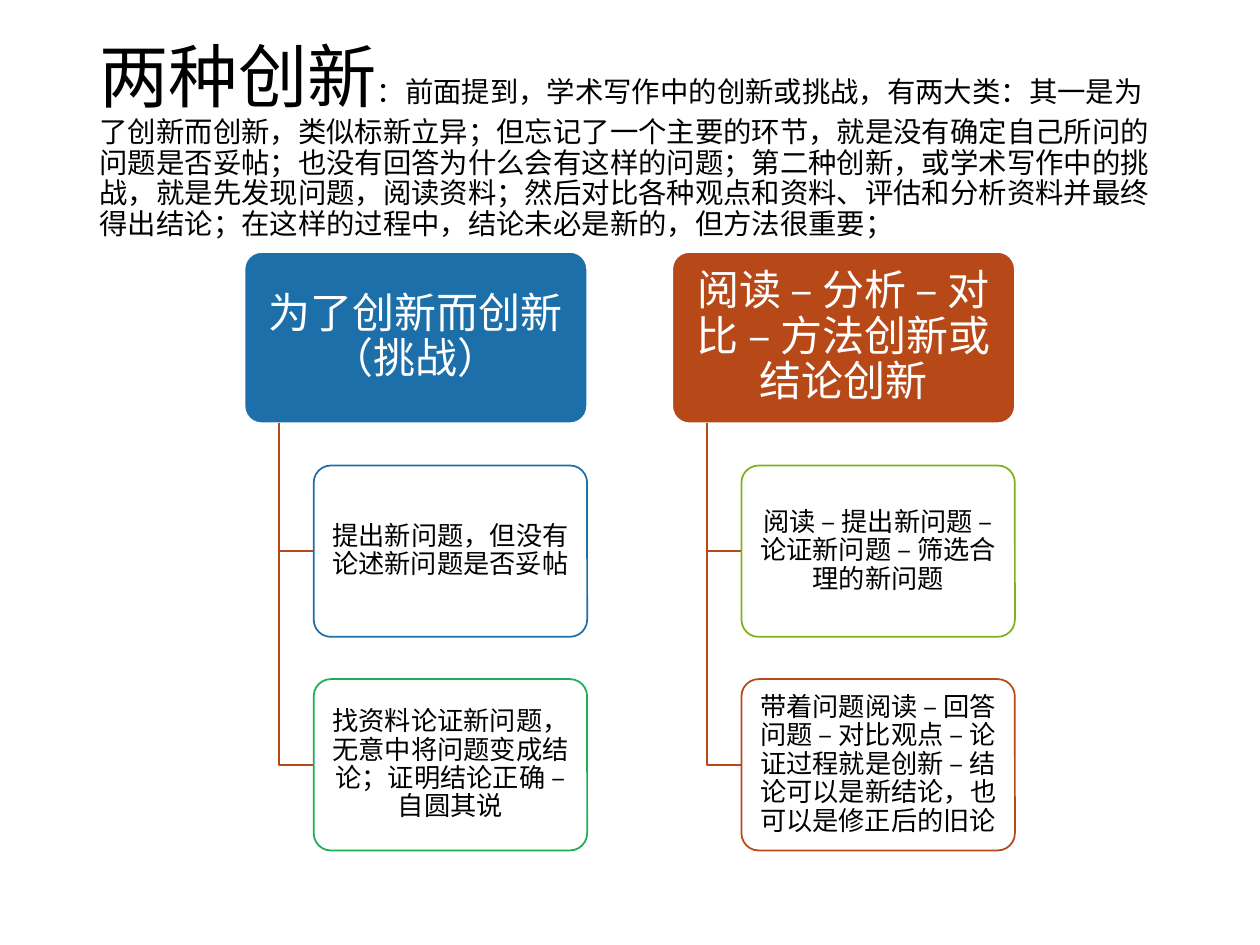
"""Build a slide that contrasts two kinds of innovation as a two-column hierarchy."""
from dataclasses import dataclass

from pptx import Presentation
from pptx.dml.color import RGBColor
from pptx.enum.shapes import MSO_SHAPE
from pptx.enum.text import MSO_ANCHOR, MSO_AUTO_SIZE, PP_ALIGN
from pptx.slide import Slide
from pptx.util import Inches, Pt

ROUNDED = MSO_SHAPE.ROUNDED_RECTANGLE
MIDDLE = MSO_ANCHOR.MIDDLE
NO_AUTOFIT = MSO_AUTO_SIZE.NONE
LEFT, CENTER = PP_ALIGN.LEFT, PP_ALIGN.CENTER

BLACK = RGBColor(0x00, 0x00, 0x00)
WHITE = RGBColor(0xFF, 0xFF, 0xFF)
BLUE = RGBColor(0x1D, 0x6F, 0xA9)
GREEN = RGBColor(0x1C, 0xAE, 0x53)
LIME = RGBColor(0x7F, 0xB2, 0x1A)
RUST = RGBColor(0xB7, 0x49, 0x19)

FONT = "Times New Roman"
COLUMN_LEFT, COLUMN_STEP = 1.94, 3.395
TOP, ROW_STEP, BOX_HEIGHT = 2.0, 1.695, 1.36
HEADER_WIDTH, CHILD_WIDTH = 2.72, 2.17
TRUNK_OFFSET, CHILD_OFFSET = 0.275, 0.55


@dataclass
class Card:
    text: str
    fill: RGBColor
    line: RGBColor
    color: RGBColor
    size: float
    width: float
    margins: tuple[float, float]


def header(text: str, fill: RGBColor) -> Card:
    return Card(text, fill, WHITE, WHITE, 24, HEADER_WIDTH, (0.05, 0.03))


def child(text: str, line: RGBColor) -> Card:
    return Card(text, WHITE, line, BLACK, 15, CHILD_WIDTH, (0.03, 0.02))


@dataclass
class Branch:
    head: Card
    children: list[Card]


TITLE_SPANS = [
    ("两种创新", 39.6),
    ("：前面提到，学术写作中的创新或挑战，有两大类：其一是为了创新而创新，类似标新立异；"
     "但忘记了一个主要的环节，就是没有确定自己所问的问题是否妥帖；也没有回答为什么会有这样的问题；"
     "第二种创新，或学术写作中的挑战，就是先发现问题，阅读资料；然后对比各种观点和资料、"
     "评估和分析资料并最终得出结论；在这样的过程中，结论未必是新的，但方法很重要；", 16.2),
]
BRANCHES = [
    Branch(header("为了创新而创新（挑战）", BLUE), [
        child("提出新问题，但没有论述新问题是否妥帖", BLUE),
        child("找资料论证新问题，无意中将问题变成结论；证明结论正确 – 自圆其说", GREEN),
    ]),
    Branch(header("阅读 – 分析 – 对比 – 方法创新或结论创新", RUST), [
        child("阅读 – 提出新问题 – 论证新问题 – 筛选合理的新问题", LIME),
        child("带着问题阅读 – 回答问题 – 对比观点 – 论证过程就是创新 – "
              "结论可以是新结论，也可以是修正后的旧论", RUST),
    ]),
]


def format_span(span, size: float, color: RGBColor) -> None:
    span.font.name = FONT
    span.font.size = Pt(size)
    span.font.color.rgb = color


def write_title(page: Slide) -> None:
    title = page.shapes.title
    title.left, title.top = Inches(0.69), Inches(0.4)
    title.width, title.height = Inches(8.62), Inches(1.45)
    frame = title.text_frame
    frame.auto_size = NO_AUTOFIT
    frame.vertical_anchor = MIDDLE
    para = frame.paragraphs[0]
    para.alignment = LEFT
    para.line_spacing = 0.9
    for text, size in TITLE_SPANS:
        span = para.add_run()
        span.text = text
        format_span(span, size, BLACK)


def draw_card(page: Slide, card: Card, left: float, top: float) -> None:
    box = page.shapes.add_shape(
        ROUNDED, Inches(left), Inches(top), Inches(card.width), Inches(BOX_HEIGHT))
    box.adjustments[0] = 0.1
    box.shadow.inherit = False
    box.fill.solid()
    box.fill.fore_color.rgb = card.fill
    box.line.color.rgb = card.line
    box.line.width = Pt(1)
    frame = box.text_frame
    frame.word_wrap = True
    frame.vertical_anchor = MIDDLE
    side, end = card.margins
    frame.margin_left = frame.margin_right = Inches(side)
    frame.margin_top = frame.margin_bottom = Inches(end)
    frame.text = card.text
    para = frame.paragraphs[0]
    para.alignment = CENTER
    para.line_spacing = 0.9
    format_span(para.runs[0], card.size, card.color)


def draw_elbow(page: Slide, left: float, top: float, right: float, bottom: float) -> None:
    builder = page.shapes.build_freeform(Inches(left), Inches(top))
    builder.add_line_segments(
        [(Inches(left), Inches(bottom)), (Inches(right), Inches(bottom))], close=False)
    elbow = builder.convert_to_shape()
    elbow.shadow.inherit = False
    elbow.fill.background()
    elbow.line.color.rgb = RUST
    elbow.line.width = Pt(1)


def draw_branch(page: Slide, branch: Branch, left: float) -> None:
    draw_card(page, branch.head, left, TOP)
    child_left = left + CHILD_OFFSET
    for row, card in enumerate(branch.children, start=1):
        top = TOP + row * ROW_STEP
        draw_elbow(page, left + TRUNK_OFFSET, TOP + BOX_HEIGHT,
                   child_left, top + BOX_HEIGHT / 2)
        draw_card(page, card, child_left, top)


def main() -> None:
    deck = Presentation()
    deck.slide_width, deck.slide_height = Inches(10), Inches(7.5)
    page = deck.slides.add_slide(deck.slide_layouts.get_by_name("Title Only"))
    write_title(page)
    for column, branch in enumerate(BRANCHES):
        draw_branch(page, branch, COLUMN_LEFT + column * COLUMN_STEP)
    deck.save("out.pptx")


if __name__ == "__main__":
    main()
